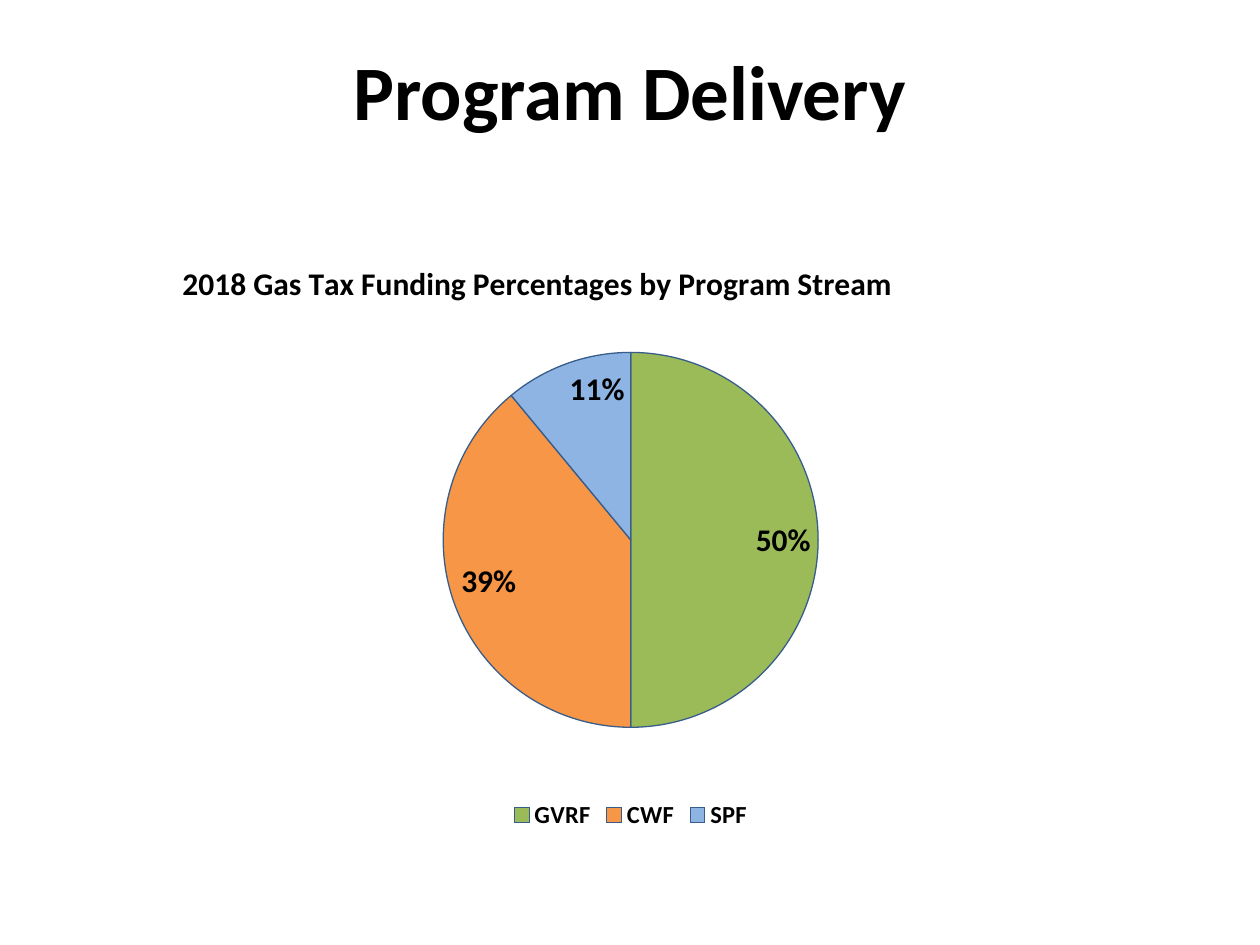
from lxml import etree
from pptx import Presentation
from pptx.chart.data import CategoryChartData
from pptx.dml.color import RGBColor
from pptx.enum.chart import XL_CHART_TYPE, XL_LABEL_POSITION, XL_LEGEND_POSITION
from pptx.enum.text import MSO_ANCHOR, PP_ALIGN
from pptx.oxml.ns import qn
from pptx.util import Pt

PIE = XL_CHART_TYPE.PIE
INSIDE_END = XL_LABEL_POSITION.INSIDE_END
BOTTOM = XL_LEGEND_POSITION.BOTTOM
MIDDLE = MSO_ANCHOR.MIDDLE
CENTER = PP_ALIGN.CENTER

FONT = "Calibri"
BLACK = "000000"
OUTLINE = "385D8A"
STREAMS = [("GVRF", 0.5, "9BBB59"), ("CWF", 0.39, "F79646"), ("SPF", 0.11, "8EB4E3")]


def style_font(font, size, bold=True):
    font.name = FONT
    font.size = Pt(size)
    font.bold = bold
    font.color.rgb = RGBColor.from_string(BLACK)


def set_manual_layout(element, index, settings):
    """Place a chart part by fractions of the chart area."""
    for old_layout in element.findall(qn("c:layout")):
        element.remove(old_layout)
    layout = etree.Element(qn("c:layout"))
    manual = etree.SubElement(layout, qn("c:manualLayout"))
    for name, value in settings.items():
        etree.SubElement(manual, qn(f"c:{name}")).set("val", str(value))
    element.insert(index, layout)


presentation = Presentation()
presentation.slide_width = Pt(720)
presentation.slide_height = Pt(540)
slide = presentation.slides.add_slide(presentation.slide_layouts[5])

# Slide title
title = slide.shapes.title
title.left, title.top, title.width, title.height = Pt(36), Pt(6.5), Pt(648), Pt(90)
title.text_frame.text = "Program Delivery"
title.text_frame.vertical_anchor = MIDDLE
paragraph = title.text_frame.paragraphs[0]
paragraph.alignment = CENTER
style_font(paragraph.runs[0].font, 44)

# Funding pie chart
chart_data = CategoryChartData(number_format="0%")
chart_data.categories = [name for name, share, color in STREAMS]
chart_data.add_series("Series 1", [share for name, share, color in STREAMS])
chart = slide.shapes.add_chart(
    PIE, Pt(78.5), Pt(139.7), Pt(563.8), Pt(337.7), chart_data
).chart
style_font(chart.font, 10, bold=False)

chart.has_title = True
chart_title = chart.chart_title
chart_title.text_frame.text = "2018 Gas Tax Funding Percentages by Program Stream"
style_font(chart_title.text_frame.paragraphs[0].runs[0].font, 18)
set_manual_layout(
    chart_title.element, 1, {"xMode": "edge", "yMode": "edge", "x": 0.04, "y": 0.02}
)
chart_title.element.find(qn("c:overlay")).set("val", "1")

chart.has_legend = True
chart.legend.position = BOTTOM
chart.legend.include_in_layout = False
style_font(chart.legend.font, 14)

plot = chart.plots[0]
plot.vary_by_categories = True
plot_area = chart.element.find(".//" + qn("c:plotArea"))
set_manual_layout(plot_area, 0, {
    "layoutTarget": "inner", "xMode": "edge", "yMode": "edge",
    "x": 0.31, "y": 0.18, "w": 0.38, "h": 0.64,
})

series = plot.series[0]
for index, (name, share, color) in enumerate(STREAMS):
    slice_format = series.points[index].format
    slice_format.fill.solid()
    slice_format.fill.fore_color.rgb = RGBColor.from_string(color)
    slice_format.line.color.rgb = RGBColor.from_string(OUTLINE)
    slice_format.line.width = Pt(0.75)

labels = series.data_labels
labels.show_value = True
labels.number_format = "0%"
labels.number_format_is_linked = False
labels.position = INSIDE_END
style_font(labels.font, 18)

presentation.save("out.pptx")
